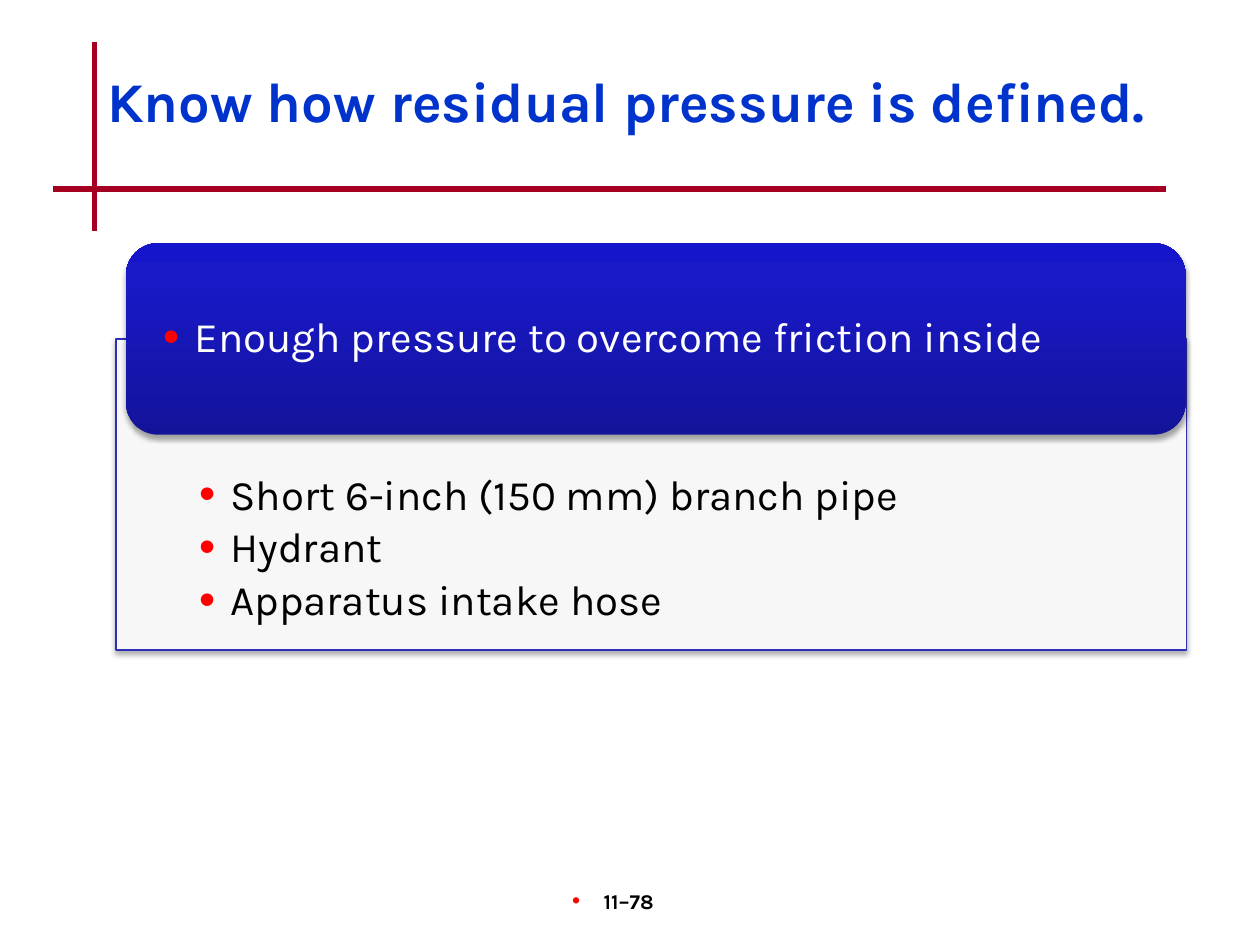
from copy import deepcopy

from lxml import etree
from pptx import Presentation
from pptx.dml.color import RGBColor
from pptx.enum.shapes import MSO_CONNECTOR, MSO_SHAPE
from pptx.enum.text import MSO_ANCHOR, MSO_AUTO_SIZE, PP_ALIGN
from pptx.oxml import parse_xml
from pptx.oxml.ns import nsdecls, qn
from pptx.util import Inches, Pt

FONT = "Karla"
BLACK = RGBColor(0x00, 0x00, 0x00)
WHITE = RGBColor(0xFF, 0xFF, 0xFF)
CRIMSON = RGBColor(0xA5, 0x00, 0x21)
TITLE_BLUE = RGBColor(0x00, 0x33, 0xCC)
OUTLINE_BLUE = RGBColor(0x2E, 0x2E, 0xB9)
HEADER_STOPS = [(0, RGBColor(0x13, 0x13, 0x9A)),
                (0.8, RGBColor(0x19, 0x19, 0xC8)),
                (1, RGBColor(0x15, 0x15, 0xCC))]


def write_bullet(para, text, size, color):
    properties = para._p.get_or_add_pPr()
    properties.set("marL", str(Inches(0.25)))
    properties.set("indent", str(-Inches(0.25)))
    for tag in ('buClr %s><a:srgbClr val="FF0000"/></a:buClr>',
                'buSzPct %s val="110000"/>',
                'buFont %s typeface="Arial"/>',
                'buChar %s char="•"/>'):
        properties.append(parse_xml("<a:" + tag % nsdecls("a")))
    para.text = text
    para.font.name = FONT
    para.font.size = Pt(size)
    para.font.color.rgb = color


def add_soft_shadow(shape):
    shape.shadow.inherit = False
    effects = shape._element.spPr.find(qn("a:effectLst"))
    effects.append(parse_xml(
        f'<a:outerShdw {nsdecls("a")} blurRad="{Pt(3.1)}" dist="{Pt(1.8)}" '
        'dir="5400000" rotWithShape="0"><a:srgbClr val="000000">'
        '<a:alpha val="35000"/></a:srgbClr></a:outerShdw>'))


deck = Presentation()
deck.slide_width, deck.slide_height = Inches(10), Inches(7.5)
page = deck.slides.add_slide(deck.slide_layouts[5])

# Crossed rules beside and below the title
for x1, y1, x2, y2 in [(0.75, 0.33, 0.75, 1.83), (0.42, 1.5, 9.25, 1.5)]:
    rule = page.shapes.add_connector(MSO_CONNECTOR.STRAIGHT, Inches(x1),
                                     Inches(y1), Inches(x2), Inches(y2))
    rule.line.color.rgb = CRIMSON
    rule.line.width = Pt(3)
    etree.SubElement(rule._element.spPr, qn("a:effectLst"))

# Title
title = page.shapes.title
title.left, title.top = Inches(0.75), Inches(0.58)
title.width, title.height = Inches(8.5), Inches(1)
frame = title.text_frame
frame.auto_size = MSO_AUTO_SIZE.NONE
frame.vertical_anchor = MSO_ANCHOR.TOP
para = frame.paragraphs[0]
para.text = "Know how residual pressure is defined."
para.alignment = PP_ALIGN.LEFT
para.line_spacing = 0.8
para.font.name = FONT
para.font.size = Pt(32)
para.font.bold = True
para.font.color.rgb = TITLE_BLUE

# Panel with the list
panel = page.shapes.add_shape(MSO_SHAPE.RECTANGLE, Inches(0.92), Inches(2.69),
                              Inches(8.5), Inches(2.47))
panel.fill.solid()
panel.fill.fore_color.rgb = WHITE
fill_color = panel._element.spPr.find(qn("a:solidFill"))[0]
etree.SubElement(fill_color, qn("a:alpha")).set("val", "90000")
panel.line.color.rgb = OUTLINE_BLUE
panel.line.width = Pt(0.75)
add_soft_shadow(panel)
frame = panel.text_frame
frame.word_wrap = True
frame.vertical_anchor = MSO_ANCHOR.TOP
frame.margin_left = frame.margin_right = Inches(0.66)
frame.margin_top, frame.margin_bottom = Inches(1.07), Inches(0.19)
for number, text in enumerate(["Short 6-inch (150 mm) branch pipe",
                               "Hydrant", "Apparatus intake hose"]):
    para = frame.add_paragraph() if number else frame.paragraphs[0]
    write_bullet(para, text, 24, BLACK)
    para.alignment = PP_ALIGN.LEFT
    para.line_spacing = 0.9
    para.space_after = Pt(4.2)

# Header overlapping the panel
header = page.shapes.add_shape(MSO_SHAPE.ROUNDED_RECTANGLE, Inches(1),
                               Inches(1.93), Inches(8.41), Inches(1.52))
header.fill.gradient()
header.fill.gradient_angle = 90
stop_list = header._element.spPr.find(qn("a:gradFill")).find(qn("a:gsLst"))
stop_list.append(deepcopy(stop_list[-1]))
for stop, (position, color) in zip(header.fill.gradient_stops, HEADER_STOPS):
    stop.position = position
    stop.color.rgb = color
header.line.fill.background()
add_soft_shadow(header)
frame = header.text_frame
frame.word_wrap = True
frame.vertical_anchor = MSO_ANCHOR.MIDDLE
frame.margin_left = frame.margin_right = Inches(0.22)
frame.margin_top = frame.margin_bottom = 0
para = frame.paragraphs[0]
write_bullet(para, "Enough pressure to overcome friction inside", 24, WHITE)
para.alignment = PP_ALIGN.LEFT
para.line_spacing = 0.9

# Page number
footer = page.shapes.add_textbox(Inches(3.92), Inches(7), Inches(2.08), Inches(0.5))
frame = footer.text_frame
frame.word_wrap = True
frame.margin_right = Inches(0.29)
para = frame.paragraphs[0]
write_bullet(para, "11–78", 12, BLACK)
para.alignment = PP_ALIGN.CENTER
para.font.bold = True

deck.save("out.pptx")
